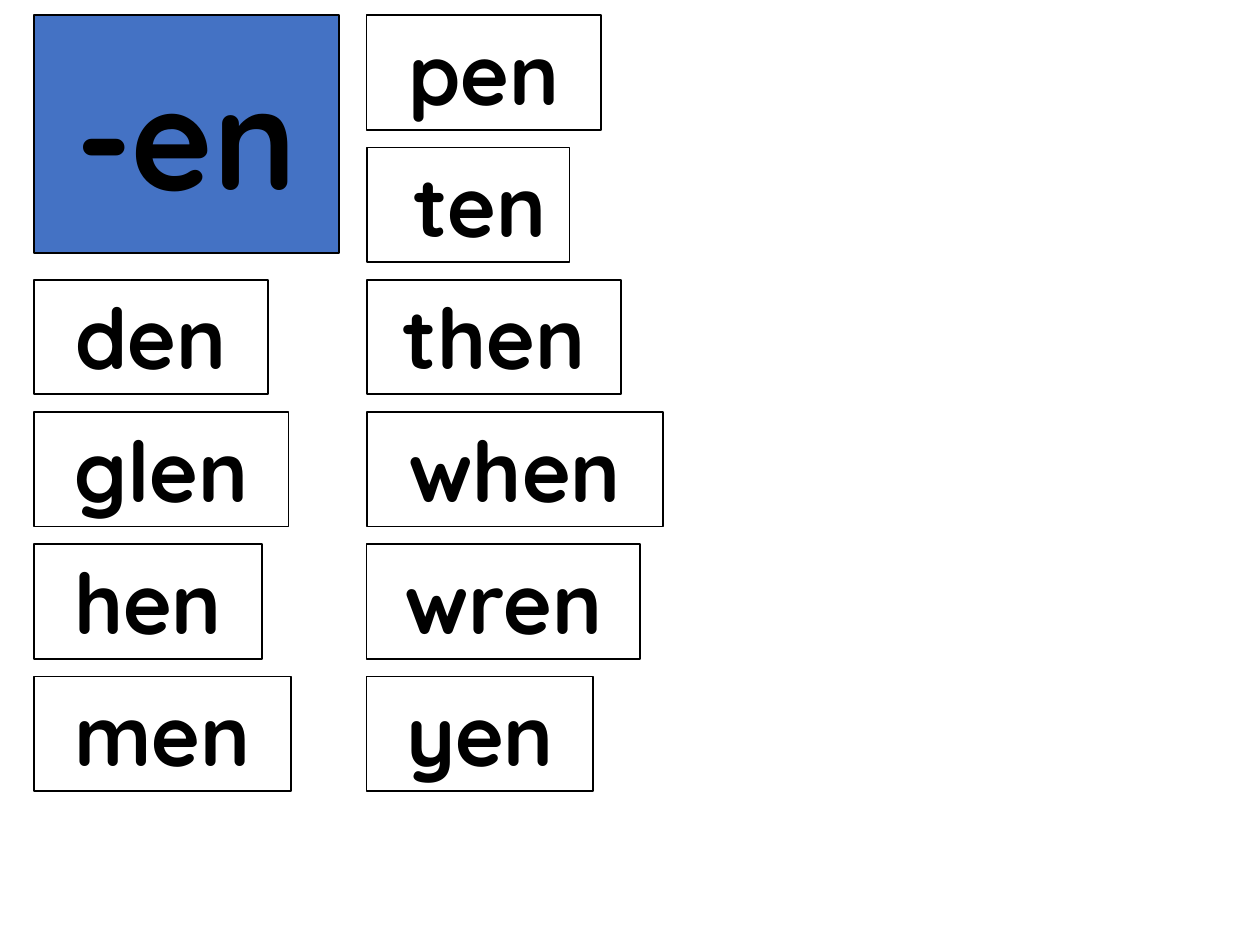
from dataclasses import dataclass

from pptx import Presentation
from pptx.dml.color import RGBColor
from pptx.enum.shapes import MSO_SHAPE
from pptx.enum.text import MSO_ANCHOR, MSO_AUTO_SIZE, PP_ALIGN
from pptx.util import Pt

RECTANGLE = MSO_SHAPE.RECTANGLE
CENTER = PP_ALIGN.CENTER
TOP, MIDDLE = MSO_ANCHOR.TOP, MSO_ANCHOR.MIDDLE
FIT_SHAPE, FIXED = MSO_AUTO_SIZE.SHAPE_TO_FIT_TEXT, MSO_AUTO_SIZE.NONE

# Content: the word family and its cards, as (word, card width)
FAMILY = "-en"
RIGHT_WORDS = [("pen", 186), ("ten", 161), ("then", 202),
               ("when", 235), ("wren", 217), ("yen", 180)]
LEFT_WORDS = [("den", 186), ("glen", 202), ("hen", 181), ("men", 204)]

# Layout in px, 100 px to the inch
EMU_PER_PX = 9144
SLIDE_WIDTH, SLIDE_HEIGHT = 1000, 750
LEFT_COLUMN, RIGHT_COLUMN = 27, 291
FIRST_ROW, ROW_STEP = 12, 105
CARD_HEIGHT = 91
FAMILY_WIDTH, FAMILY_HEIGHT = 242, 189
FAMILY_ROWS = 2


@dataclass(frozen=True)
class Theme:
    font: str = "Quicksand"
    ink: RGBColor = RGBColor(0x00, 0x00, 0x00)
    card: RGBColor = RGBColor(0xFF, 0xFF, 0xFF)
    family: RGBColor = RGBColor(0x44, 0x72, 0xC4)
    word_size: int = 48
    family_size: int = 80
    outline: int = 1


THEME = Theme()


def px(length):
    return length * EMU_PER_PX


def write_text(shape, text, *, size, anchor, wrap, fit):
    frame = shape.text_frame
    frame.word_wrap = wrap
    frame.auto_size = fit
    frame.vertical_anchor = anchor
    paragraph = frame.paragraphs[0]
    paragraph.alignment = CENTER
    run = paragraph.add_run()
    run.text = text
    run.font.name = THEME.font
    run.font.size = Pt(size)
    run.font.bold = True
    run.font.color.rgb = THEME.ink


def add_box(slide, left, top, width, height, fill):
    shape = slide.shapes.add_shape(
        RECTANGLE, px(left), px(top), px(width), px(height))
    shape.shadow.inherit = False
    shape.fill.solid()
    shape.fill.fore_color.rgb = fill
    shape.line.color.rgb = THEME.ink
    shape.line.width = Pt(THEME.outline)
    return shape


def add_word_column(slide, words, left, first_row):
    for row, (word, width) in enumerate(words, start=first_row):
        top = FIRST_ROW + row * ROW_STEP
        card = add_box(slide, left, top, width, CARD_HEIGHT, THEME.card)
        write_text(card, f" {word} ", size=THEME.word_size,
                   anchor=TOP, wrap=False, fit=FIT_SHAPE)


def main():
    presentation = Presentation()
    presentation.slide_width = px(SLIDE_WIDTH)
    presentation.slide_height = px(SLIDE_HEIGHT)
    slide = presentation.slides.add_slide(presentation.slide_layouts[6])

    # Word cards
    add_word_column(slide, RIGHT_WORDS, RIGHT_COLUMN, 0)
    add_word_column(slide, LEFT_WORDS, LEFT_COLUMN, FAMILY_ROWS)

    # Word family
    family = add_box(slide, LEFT_COLUMN, FIRST_ROW,
                     FAMILY_WIDTH, FAMILY_HEIGHT, THEME.family)
    write_text(family, FAMILY, size=THEME.family_size,
               anchor=MIDDLE, wrap=True, fit=FIXED)

    presentation.save("out.pptx")


if __name__ == "__main__":
    main()
